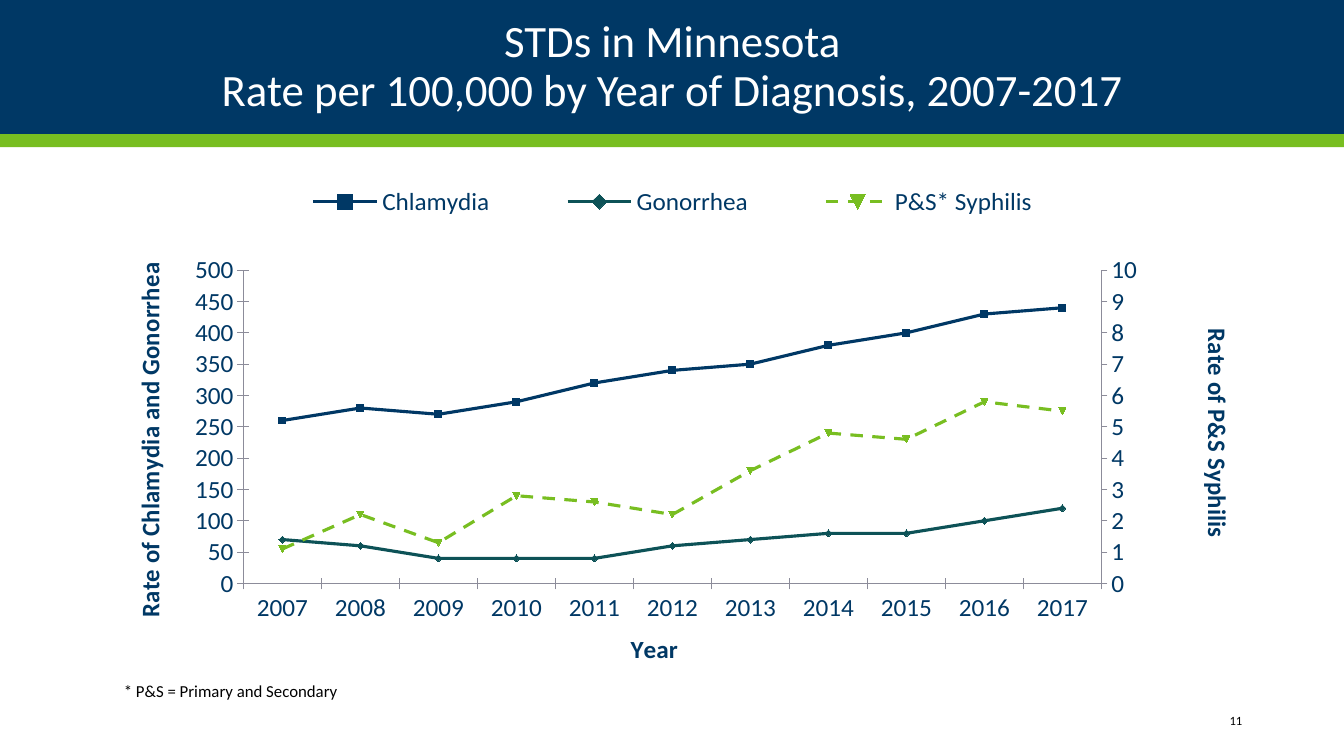
from copy import deepcopy
from dataclasses import dataclass

from lxml import etree
from pptx import Presentation
from pptx.chart.axis import ValueAxis
from pptx.chart.data import CategoryChartData
from pptx.dml.color import RGBColor
from pptx.enum.chart import XL_CHART_TYPE, XL_LEGEND_POSITION, XL_MARKER_STYLE, XL_TICK_MARK
from pptx.enum.dml import MSO_LINE
from pptx.enum.shapes import MSO_SHAPE
from pptx.enum.text import MSO_ANCHOR, PP_ALIGN
from pptx.oxml.ns import qn
from pptx.util import Inches, Pt

NAVY = RGBColor(0x00, 0x38, 0x65)
GREEN = RGBColor(0x78, 0xBE, 0x21)
TEAL = RGBColor(0x0D, 0x52, 0x57)
WHITE = RGBColor(0xFF, 0xFF, 0xFF)
BLACK = RGBColor(0x00, 0x00, 0x00)
GREY = RGBColor(0x8C, 0x8C, 0x9A)
FONT = "Calibri"
WIDTH, HEIGHT = Inches(13.33), Inches(7.5)
RECTANGLE = MSO_SHAPE.RECTANGLE
MIDDLE, TOP = MSO_ANCHOR.MIDDLE, MSO_ANCHOR.TOP
LEFT, CENTER, RIGHT = PP_ALIGN.LEFT, PP_ALIGN.CENTER, PP_ALIGN.RIGHT
LINE_MARKERS = XL_CHART_TYPE.LINE_MARKERS
LEGEND_TOP = XL_LEGEND_POSITION.TOP
AUTO_MARKER = XL_MARKER_STYLE.AUTOMATIC
CROSS, OUTSIDE = XL_TICK_MARK.CROSS, XL_TICK_MARK.OUTSIDE
DASH = MSO_LINE.DASH


@dataclass(frozen=True)
class Area:
    left: float
    top: float
    width: float
    height: float

    def place(self) -> tuple[int, int, int, int]:
        return (int(self.left * WIDTH / 13.33), int(self.top * HEIGHT / 7.5),
                int(self.width * WIDTH / 13.33), int(self.height * HEIGHT / 7.5))


@dataclass(frozen=True)
class Band:
    area: Area
    color: RGBColor


@dataclass(frozen=True)
class Label:
    text: str
    area: Area
    size: int
    color: RGBColor
    align: PP_ALIGN
    anchor: MSO_ANCHOR
    spacing: float = 1.0


@dataclass(frozen=True)
class Rate:
    name: str
    values: tuple[float, ...]
    color: RGBColor
    dashed: bool = False


BANDS = (
    Band(Area(0, 0, 13.33, 1.33), NAVY),
    Band(Area(0, 1.33, 13.33, 0.13), GREEN),
)
LABELS = (
    Label("STDs in Minnesota\vRate per 100,000 by Year of Diagnosis, 2007-2017",
          Area(0.92, 0.17, 11.5, 1), 32, WHITE, CENTER, MIDDLE, 0.9),
    Label("* P&S = Primary and Secondary", Area(1.13, 6.7, 2.42, 0.3), 12, BLACK, LEFT, TOP),
    Label("11", Area(10.82, 6.95, 1.6, 0.4), 9, BLACK, RIGHT, MIDDLE),
)
CHART_AREA = Area(0.92, 1.71, 11.5, 4.96)
YEARS = [str(year) for year in range(2007, 2018)]
RATES = (
    Rate("Chlamydia", (260, 280, 270, 290, 320, 340, 350, 380, 400, 430, 440), NAVY),
    Rate("Gonorrhea", (70, 60, 40, 40, 40, 60, 70, 80, 80, 100, 120), TEAL),
    Rate("P&S* Syphilis", (1.1, 2.2, 1.3, 2.8, 2.6, 2.2, 3.6, 4.8, 4.6, 5.8, 5.5), GREEN, True),
)


def add_band(page, band: Band) -> None:
    box = page.shapes.add_shape(RECTANGLE, *band.area.place())
    box.shadow.inherit = False
    box.fill.solid()
    box.fill.fore_color.rgb = band.color
    box.line.fill.background()


def style_font(font, size: int, color: RGBColor, bold: bool = False) -> None:
    font.name, font.size, font.bold = FONT, Pt(size), bold
    font.color.rgb = color


def add_label(page, label: Label) -> None:
    frame = page.shapes.add_textbox(*label.area.place()).text_frame
    frame.word_wrap = True
    frame.vertical_anchor = label.anchor
    frame.text = label.text
    para = frame.paragraphs[0]
    para.alignment = label.align
    para.line_spacing = label.spacing
    for span in para.runs:
        style_font(span.font, label.size, label.color)


def set_layout(parent, index: int, **shares: float) -> None:
    for old in parent.findall(qn("c:layout")):
        parent.remove(old)
    layout = etree.Element(qn("c:layout"))
    manual = etree.SubElement(layout, qn("c:manualLayout"))
    if parent.tag == qn("c:plotArea"):
        etree.SubElement(manual, qn("c:layoutTarget")).set("val", "inner")
    for side in ("x", "y"):
        etree.SubElement(manual, qn(f"c:{side}Mode")).set("val", "edge")
    for side, share in shares.items():
        etree.SubElement(manual, qn(f"c:{side}")).set("val", str(share))
    parent.insert(index, layout)


def title_axis(axis, text: str, left: float, top: float, turn: int = 0) -> None:
    frame = axis.axis_title.text_frame
    frame.text = text
    style_font(frame.paragraphs[0].runs[0].font, 18, NAVY, True)
    body = frame._txBody.find(qn("a:bodyPr"))
    body.set("rot", str(turn * 60000))
    body.set("vert", "horz")
    set_layout(axis.axis_title._element, 1, x=left, y=top)


def style_axis(axis, tick: XL_TICK_MARK) -> None:
    axis.major_tick_mark = tick
    axis.format.line.color.rgb = GREY
    axis.format.line.width = Pt(0.75)
    style_font(axis.tick_labels.font, 18, NAVY)


def scale_axis(axis, top: int, step: int) -> None:
    axis.minimum_scale, axis.maximum_scale, axis.major_unit = 0, top, step


def style_series(series, rate: Rate) -> None:
    series.smooth = False
    series.format.line.color.rgb = rate.color
    series.format.line.width = Pt(2.25)
    if rate.dashed:
        series.format.line.dash_style = DASH
    series.marker.style = AUTO_MARKER
    series.marker.size = 5
    series.marker.format.fill.solid()
    series.marker.format.fill.fore_color.rgb = rate.color
    series.marker.format.line.color.rgb = rate.color


def add_right_axis(chart) -> ValueAxis:
    left_lines = chart.plots[0]._element
    years, left = chart.category_axis._element, chart.value_axis._element
    right_lines, right_years, right = (deepcopy(part) for part in (left_lines, years, left))
    left_lines.remove(left_lines.findall(qn("c:ser"))[-1])
    for series in right_lines.findall(qn("c:ser"))[:-1]:
        right_lines.remove(series)
    for node, number in zip(right_lines.findall(qn("c:axId")), ("5001", "5002")):
        node.set("val", number)
    for part, own, other in ((right_years, "5001", "5002"), (right, "5002", "5001")):
        part.find(qn("c:axId")).set("val", own)
        part.find(qn("c:crossAx")).set("val", other)
    right_years.find(qn("c:delete")).set("val", "1")
    right.find(qn("c:axPos")).set("val", "r")
    right.find(qn("c:crosses")).set("val", "max")
    left_lines.addnext(right_lines)
    left.addnext(right_years)
    right_years.addnext(right)
    return ValueAxis(right)


def add_rates_chart(page) -> None:
    data = CategoryChartData()
    data.categories = YEARS
    for rate in RATES:
        data.add_series(rate.name, rate.values)
    chart = page.shapes.add_chart(LINE_MARKERS, *CHART_AREA.place(), data).chart
    chart.has_title = False
    style_font(chart.font, 18, NAVY)
    chart.has_legend = True
    chart.legend.position = LEGEND_TOP
    chart.legend.include_in_layout = False
    style_font(chart.legend.font, 18, NAVY)
    set_layout(chart.legend._element, 1, x=0.13, y=0.01, w=0.74, h=0.1)
    chart.plots[0].vary_by_categories = False
    for series, rate in zip(chart.plots[0].series, RATES):
        style_series(series, rate)
    years, left = chart.category_axis, chart.value_axis
    left.has_major_gridlines = False
    style_axis(years, CROSS)
    style_axis(left, CROSS)
    right = add_right_axis(chart)
    style_axis(right, OUTSIDE)
    scale_axis(left, 500, 50)
    scale_axis(right, 10, 1)
    title_axis(years, "Year", 0.46, 0.93)
    title_axis(left, "Rate of Chlamydia and Gonorrhea", 0.03, 0.19, -90)
    title_axis(right, "Rate of P&S Syphilis", 0.95, 0.31, 90)
    plot_area = chart.plots[0]._element.getparent()
    set_layout(plot_area, 0, x=0.13, y=0.2, w=0.74, h=0.64)


def main() -> None:
    deck = Presentation()
    deck.slide_width, deck.slide_height = WIDTH, HEIGHT
    page = deck.slides.add_slide(deck.slide_layouts[6])
    for band in BANDS:
        add_band(page, band)
    add_rates_chart(page)
    for label in LABELS:
        add_label(page, label)
    deck.save("out.pptx")


if __name__ == "__main__":
    main()
